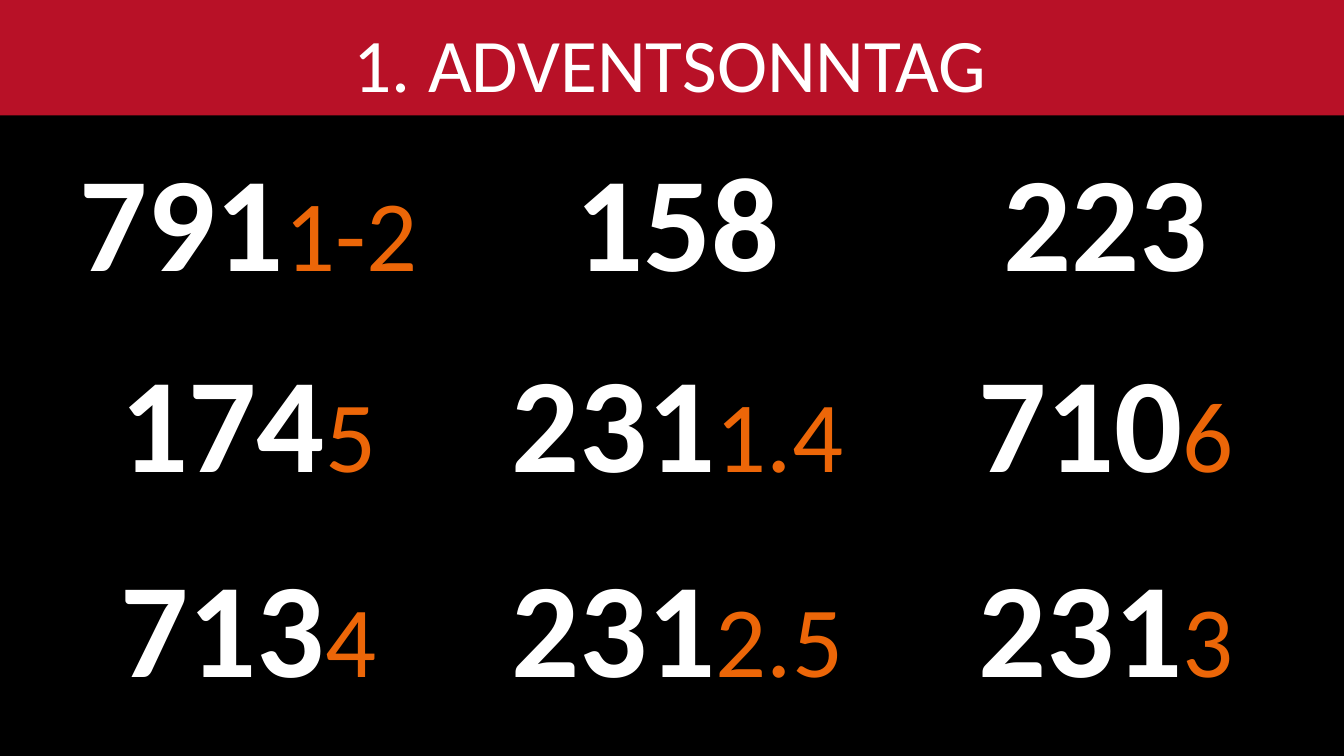
from pptx import Presentation
from pptx.dml.color import RGBColor
from pptx.enum.shapes import MSO_SHAPE as Shape
from pptx.enum.text import MSO_ANCHOR as Anchor, MSO_AUTO_SIZE as AutoSize, PP_ALIGN as Align
from pptx.oxml.ns import qn
from pptx.util import Pt

COLORS = {"background": "000000", "band": "B81127", "text": "FFFFFF", "verse": "EC6608"}
NO_GRID_STYLE = "{2D5ABB26-0587-4C30-8999-92F81FD0307C}"
SONGS = [
    [("791", "1-2"), ("158", ""), ("223", "")],
    [("174", "5"), ("231", "1.4"), ("710", "6")],
    [("713", "4"), ("231", "2.5"), ("231", "3")],
]


class SongBoard:
    """Holds the style and the slide that shows the song numbers."""

    font_name = "Calibri"

    def __init__(self, presentation):
        self.slide = presentation.slides.add_slide(presentation.slide_layouts[5])
        fill = self.slide.background.fill
        fill.solid()
        fill.fore_color.rgb = self.color("background")

    def color(self, name):
        return RGBColor.from_string(COLORS[name])

    def format_run(self, run, size, color, bold=False):
        run.font.name = self.font_name
        run.font.size = Pt(size)
        run.font.bold = bold
        run.font.color.rgb = self.color(color)

    def band(self, width, height):
        shape = self.slide.shapes.add_shape(Shape.RECTANGLE, 0, 0, Pt(width), Pt(height))
        shape.shadow.inherit = False
        shape.fill.solid()
        shape.fill.fore_color.rgb = self.color("band")
        shape.line.fill.background()

    def title(self, text, left, top, width, height):
        shape = self.slide.shapes.title
        self.slide.shapes._spTree.append(shape._element)
        shape.left, shape.top, shape.width, shape.height = map(Pt, (left, top, width, height))
        text_frame = shape.text_frame
        text_frame.text = text
        text_frame.word_wrap = True
        text_frame.auto_size = AutoSize.NONE
        text_frame.vertical_anchor = Anchor.TOP
        paragraph = text_frame.paragraphs[0]
        paragraph.alignment = Align.CENTER
        self.format_run(paragraph.runs[0], 54, "text")

    def song_table(self, songs, left, top, column_width, row_heights):
        columns = len(songs[0])
        frame = self.slide.shapes.add_table(
            len(songs), columns, Pt(left), Pt(top),
            Pt(column_width * columns), Pt(sum(row_heights)))
        table = frame.table
        table.first_row = table.horz_banding = False
        table._tbl.tblPr.find(qn("a:tableStyleId")).text = NO_GRID_STYLE
        for row, height, row_songs in zip(table.rows, row_heights, songs):
            row.height = Pt(height)
            for cell, song in zip(row.cells, row_songs):
                self.song(cell, *song)

    def song(self, cell, number, verses):
        cell.fill.background()
        paragraph = cell.text_frame.paragraphs[0]
        paragraph.text = number
        paragraph.alignment = Align.CENTER
        self.format_run(paragraph.runs[0], 96, "text", bold=True)
        if verses:
            run = paragraph.add_run()
            run.text = verses
            self.format_run(run, 72, "verse")


def main():
    presentation = Presentation()
    presentation.slide_width, presentation.slide_height = Pt(960), Pt(540)
    board = SongBoard(presentation)
    board.band(960, 82.5)
    board.song_table(SONGS, 24.5, 98.6, 306.25, [144, 146.2, 142.6])
    board.title("1. ADVENTSONNTAG", 12.25, 8.65, 933, 72.7)
    presentation.save("out.pptx")


if __name__ == "__main__":
    main()
